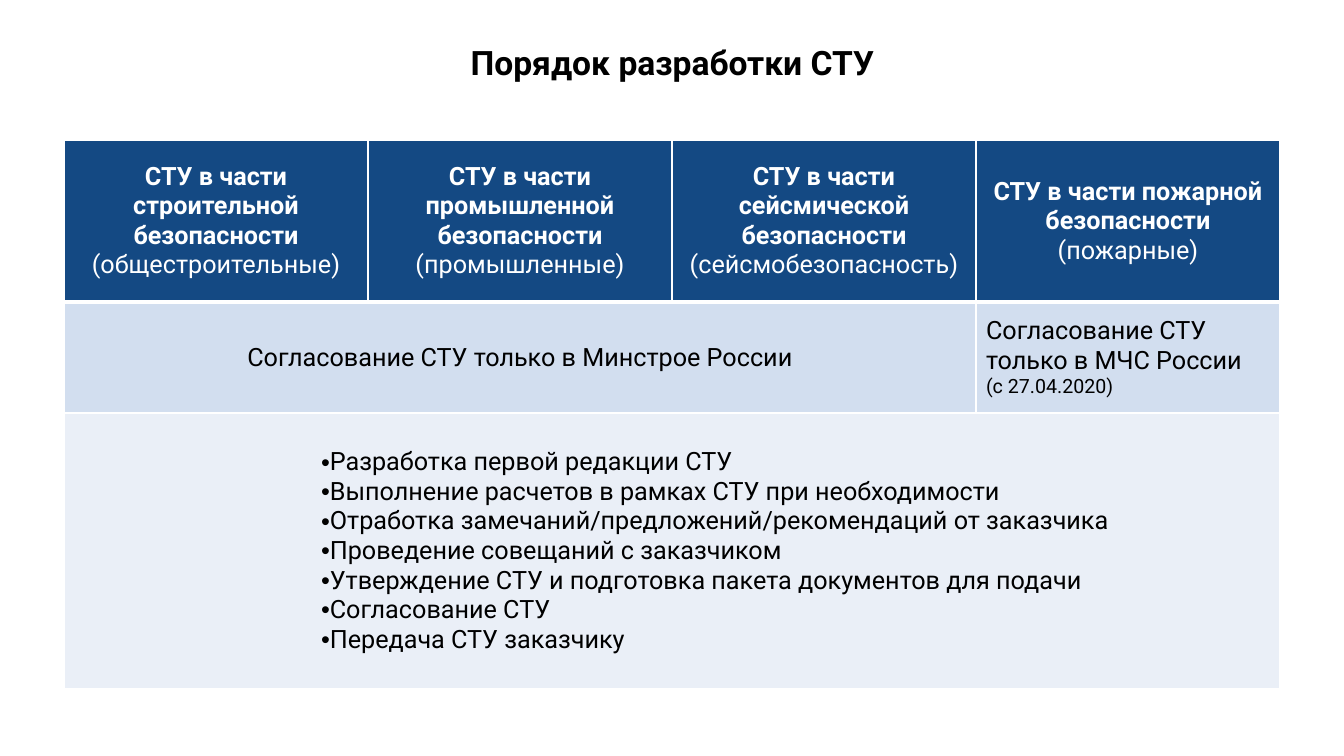
from lxml import etree
from pptx import Presentation
from pptx.dml.color import RGBColor
from pptx.enum.text import MSO_ANCHOR, PP_ALIGN
from pptx.oxml.ns import qn
from pptx.util import Pt

MIDDLE = MSO_ANCHOR.MIDDLE
CENTER, LEFT = PP_ALIGN.CENTER, PP_ALIGN.LEFT

# Content
TITLE = "Порядок разработки СТУ"
SAFETY_AREAS = [
    ("строительной", "общестроительные"),
    ("промышленной", "промышленные"),
    ("сейсмической", "сейсмобезопасность"),
    ("пожарной", "пожарные"),
]
MINISTRY_APPROVAL = "Согласование СТУ только в Минстрое России"
FIRE_APPROVAL = "Согласование СТУ только в МЧС России"
FIRE_APPROVAL_DATE = "(с 27.04.2020)"
STAGES = [
    "Разработка первой редакции СТУ",
    "Выполнение расчетов в рамках СТУ при необходимости",
    "Отработка замечаний/предложений/рекомендаций от заказчика",
    "Проведение совещаний с заказчиком",
    "Утверждение СТУ и подготовка пакета документов для подачи",
    "Согласование СТУ",
    "Передача СТУ заказчику",
]

# Look
FONT = "Roboto"
BLACK, WHITE = "000000", "FFFFFF"
ROW_FILLS = ["144983", "D2DEEF", "EAEFF7"]
ROW_HEIGHTS = [162, 111, 276]
COLUMN_WIDTH = 304
TABLE_LEFT, TABLE_TOP = 64, 140
THIN, THICK = 1, 3
STAGE_MARGIN, STAGE_INDENT = 228, 19


def px(length):
    return round(length * 914400 / 100.8)


def color(hex_code):
    return RGBColor.from_string(hex_code)


def add_run(paragraph, text, size=18, ink=BLACK, bold=False):
    run = paragraph.add_run()
    run.text = text
    run.font.name = FONT
    run.font.size = Pt(size)
    run.font.bold = bold
    run.font.color.rgb = color(ink)


def next_paragraph(frame, align):
    first = frame.paragraphs[0]
    paragraph = frame.add_paragraph() if first.runs else first
    paragraph.alignment = align
    return paragraph


def add_bullet(paragraph):
    properties = paragraph._p.get_or_add_pPr()
    properties.set("marL", str(px(STAGE_MARGIN)))
    properties.set("indent", str(px(STAGE_INDENT)))
    etree.SubElement(properties, qn("a:buFont")).set("typeface", "Arial")
    etree.SubElement(properties, qn("a:buChar")).set("char", "•")


def set_borders(cell, top, bottom):
    properties = cell._tc.get_or_add_tcPr()
    sides = [("lnL", THIN), ("lnR", THIN), ("lnT", top), ("lnB", bottom)]
    for position, (side, width) in enumerate(sides):
        line = etree.Element(qn("a:" + side), w=str(Pt(width)))
        fill = etree.SubElement(line, qn("a:solidFill"))
        etree.SubElement(fill, qn("a:srgbClr")).set("val", WHITE)
        properties.insert(position, line)


prs = Presentation()
prs.slide_width, prs.slide_height = px(1344), px(756)
slide = prs.slides.add_slide(prs.slide_layouts[6])

# Title
title_box = slide.shapes.add_textbox(px(93), px(40), px(1159), px(50))
title_frame = title_box.text_frame
title_frame.word_wrap = True
title_frame.vertical_anchor = MIDDLE
title_line = next_paragraph(title_frame, CENTER)
title_line.line_spacing = 0.9
add_run(title_line, TITLE, size=24, bold=True)

# Table grid
column_count = len(SAFETY_AREAS)
table = slide.shapes.add_table(
    len(ROW_HEIGHTS), column_count, px(TABLE_LEFT), px(TABLE_TOP),
    px(COLUMN_WIDTH * column_count), px(sum(ROW_HEIGHTS))).table
table.horz_banding = False
for column in table.columns:
    column.width = px(COLUMN_WIDTH)
for r, (height, row_fill) in enumerate(zip(ROW_HEIGHTS, ROW_FILLS)):
    table.rows[r].height = px(height)
    for c in range(column_count):
        cell = table.cell(r, c)
        cell.vertical_anchor = MIDDLE
        cell.fill.solid()
        cell.fill.fore_color.rgb = color(row_fill)
        set_borders(cell, THICK if r == 1 else THIN, THICK if r == 0 else THIN)

# Header row
for c, (area, short_name) in enumerate(SAFETY_AREAS):
    heading = next_paragraph(table.cell(0, c).text_frame, CENTER)
    add_run(heading, f"СТУ в части {area} безопасности ", ink=WHITE, bold=True)
    add_run(heading, f"({short_name})", ink=WHITE)

# Approval row
ministry_cell = table.cell(1, 0)
ministry_cell.merge(table.cell(1, column_count - 2))
add_run(next_paragraph(ministry_cell.text_frame, CENTER), MINISTRY_APPROVAL)
fire_frame = table.cell(1, column_count - 1).text_frame
add_run(next_paragraph(fire_frame, LEFT), FIRE_APPROVAL)
add_run(next_paragraph(fire_frame, LEFT), FIRE_APPROVAL_DATE, size=14)

# Stages row
stages_cell = table.cell(2, 0)
stages_cell.merge(table.cell(2, column_count - 1))
for stage in STAGES:
    stage_line = next_paragraph(stages_cell.text_frame, LEFT)
    add_bullet(stage_line)
    add_run(stage_line, stage)

prs.save("out.pptx")
